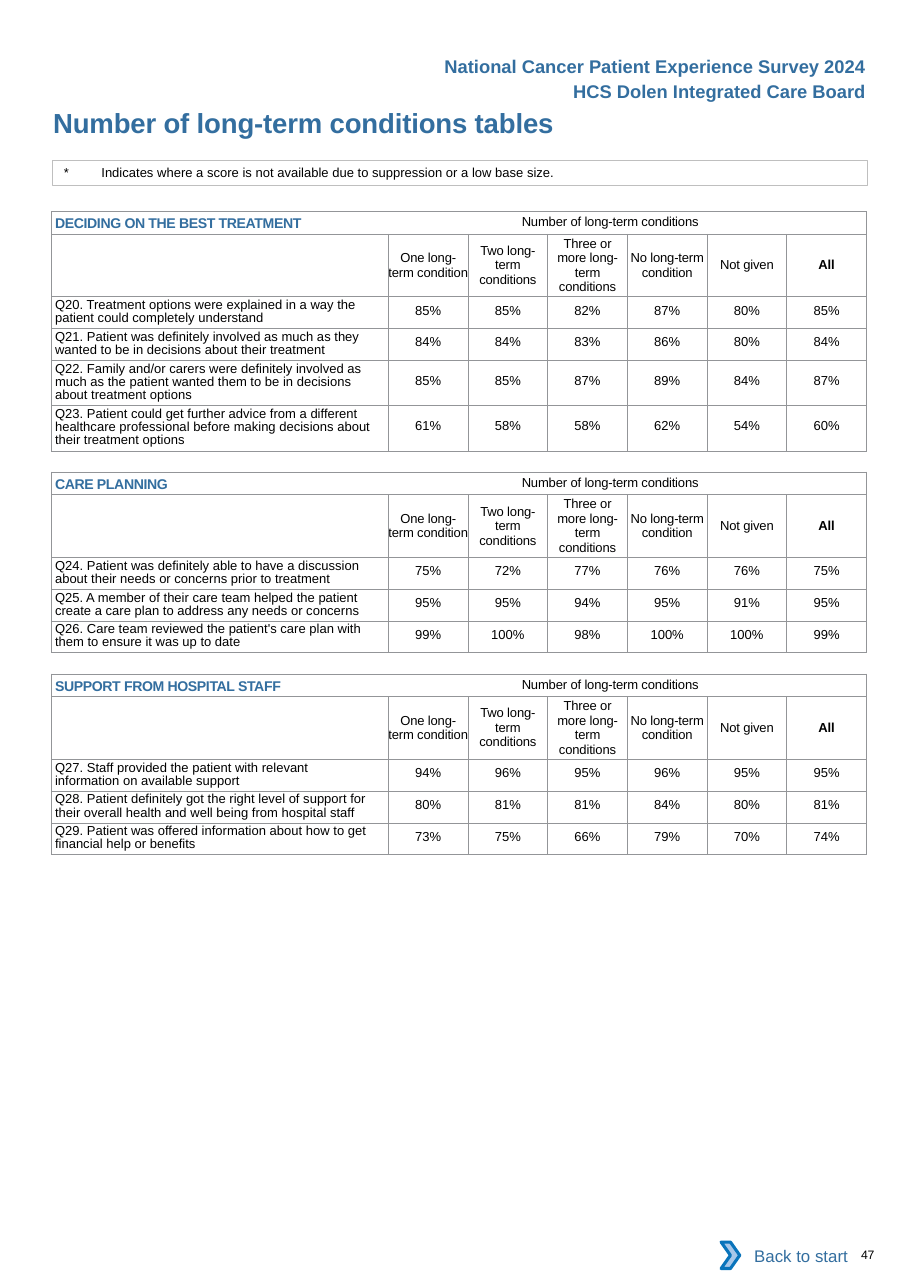
from pptx import Presentation, util as u
from pptx.dml.color import RGBColor
from pptx.enum import shapes, text
from pptx.oxml.ns import qn
from lxml import etree

BLUE, BLACK, GREY = "336E9F", "000000", "939598"
LEFT, WIDTH = 34, 533
LABEL_WIDTH, SCORE_WIDTH = 220, 52.1
TITLE_ROW, NAME_ROW = 14.8, 41
ROW_HEIGHTS = {2: 20.8, 3: 29.6}
SCORE_TOPS = {2: 4.2, 3: 8.6}
COLUMN_NAMES = ["One long-term condition", "Two long-term conditions",
                "Three or more long-term conditions", "No long-term condition",
                "Not given", "All"]

# Each question: wording, number of lines it takes, scores by column
SECTIONS = [
    (138.2, "DECIDING ON THE BEST TREATMENT", [
        ("Q20. Treatment options were explained in a way the patient could completely understand",
         2, [85, 85, 82, 87, 80, 85]),
        ("Q21. Patient was definitely involved as much as they wanted to be in decisions "
         "about their treatment", 2, [84, 84, 83, 86, 80, 84]),
        ("Q22. Family and/or carers were definitely involved as much as the patient wanted "
         "them to be in decisions about treatment options", 3, [85, 85, 87, 89, 84, 87]),
        ("Q23. Patient could get further advice from a different healthcare professional "
         "before making decisions about their treatment options",
         3, [61, 58, 58, 62, 54, 60])]),
    (308.5, "CARE PLANNING", [
        ("Q24. Patient was definitely able to have a discussion about their needs or "
         "concerns prior to treatment", 2, [75, 72, 77, 76, 76, 75]),
        ("Q25. A member of their care team helped the patient create a care plan to "
         "address any needs or concerns", 2, [95, 95, 94, 95, 91, 95]),
        ("Q26. Care team reviewed the patient's care plan with them to ensure it was "
         "up to date", 2, [99, 100, 98, 100, 100, 99])]),
    (440.4, "SUPPORT FROM HOSPITAL STAFF", [
        ("Q27. Staff provided the patient with relevant information on available support",
         2, [94, 96, 95, 96, 95, 95]),
        ("Q28. Patient definitely got the right level of support for their overall health "
         "and well being from hospital staff", 2, [80, 81, 81, 84, 80, 81]),
        ("Q29. Patient was offered information about how to get financial help or benefits",
         2, [73, 75, 66, 79, 70, 74])]),
]


def colour(value):
    return RGBColor.from_string(value)


def write_text(paragraph, words, size=8.5, color=BLACK, bold=False, align="LEFT",
               spacing=0, baseline=0, line=None):
    """Append a formatted run; spacing is in points, baseline in percent."""
    run = paragraph.add_run()
    run.text = words
    run.font.name, run.font.size, run.font.bold = "Arial", u.Pt(size), bold
    run.font.color.rgb = colour(color)
    properties = run.font._element
    if spacing:
        properties.set("spc", str(round(spacing * 100)))
    if baseline:
        properties.set("baseline", str(baseline * 1000))
    paragraph.alignment = getattr(text.PP_ALIGN, align)
    if line:
        paragraph.line_spacing = u.Pt(line)


def add_tab_stop(paragraph, position):
    properties = paragraph._p.get_or_add_pPr()
    stops = etree.SubElement(properties, qn("a:tabLst"))
    etree.SubElement(stops, qn("a:tab"), pos=str(u.Pt(position)), algn="l")


def set_insets(holder, left=0, top=0, right=0, bottom=0):
    holder.margin_left, holder.margin_top = u.Pt(left), u.Pt(top)
    holder.margin_right, holder.margin_bottom = u.Pt(right), u.Pt(bottom)


def add_plain_shape(parent, kind, box, fill=None, line=None, line_width=0.5):
    shape = parent.add_shape(kind, *map(u.Pt, box))
    shape.shadow.inherit = False
    if fill:
        shape.fill.solid()
        shape.fill.fore_color.rgb = colour(fill)
    else:
        shape.fill.background()
    if line:
        shape.line.color.rgb = colour(line)
        shape.line.width = u.Pt(line_width)
    else:
        shape.line.fill.background()
    return shape


def add_heading(slide, box):
    left, top, width, height = box
    lines = ["National Cancer Patient Experience Survey 2024", "HCS Dolen Integrated Care Board"]
    for index, words in enumerate(lines):
        label = slide.shapes.add_textbox(
            u.Pt(left), u.Pt(top + index * 16.2), u.Pt(width), u.Pt(21.6))
        label.text_frame.word_wrap = True
        write_text(label.text_frame.paragraphs[0], words, size=12, color=BLUE,
                   bold=True, align="RIGHT")
    title = slide.shapes.title
    title.left, title.top = u.Pt(LEFT), u.Pt(top + 36.5)
    title.width, title.height = u.Pt(width + 40), u.Pt(height - 36.5)
    frame = title.text_frame
    frame.auto_size = text.MSO_AUTO_SIZE.NONE
    frame.vertical_anchor = text.MSO_ANCHOR.TOP
    set_insets(frame, left=0.7)
    write_text(frame.paragraphs[0], "Number of long-term conditions tables",
               size=18, color=BLUE, bold=True, spacing=-0.1)


def add_note(slide, box):
    note = add_plain_shape(slide.shapes, shapes.MSO_SHAPE.RECTANGLE, box, line="BFBFBF")
    frame = note.text_frame
    frame.vertical_anchor = text.MSO_ANCHOR.TOP
    set_insets(frame, left=7.8, top=2.6)
    paragraph = frame.paragraphs[0]
    write_text(paragraph, "*\tIndicates where a score is not available due to "
                          "suppression or a low base size.")
    add_tab_stop(paragraph, 24.5)


def format_cell(cell):
    """Give the cell thin grey borders, no fill and no insets."""
    properties = cell._tc.get_or_add_tcPr()
    for side in ("a:lnL", "a:lnR", "a:lnT", "a:lnB"):
        border = etree.SubElement(properties, qn(side), w=str(u.Pt(0.5)))
        fill = etree.SubElement(border, qn("a:solidFill"))
        etree.SubElement(fill, qn("a:srgbClr"), val=GREY)
    cell.fill.background()
    set_insets(cell)


def add_section_table(slide, box, heading, questions):
    left, top, width = box
    heights = [TITLE_ROW, NAME_ROW] + [ROW_HEIGHTS[lines] for _, lines, _ in questions]
    frame = slide.shapes.add_table(len(heights), len(COLUMN_NAMES) + 1, u.Pt(left),
                                   u.Pt(top), u.Pt(width), u.Pt(sum(heights)))
    table = frame.table
    table.first_row = table.horz_banding = False
    for index, column in enumerate(table.columns):
        column.width = u.Pt(SCORE_WIDTH if index else LABEL_WIDTH)
    for row, height in zip(table.rows, heights):
        row.height = u.Pt(height)
    for cell in table.iter_cells():
        format_cell(cell)

    header = table.cell(0, 0)
    header.merge(table.cell(0, len(COLUMN_NAMES)))
    header.vertical_anchor = text.MSO_ANCHOR.MIDDLE
    header.margin_left = u.Pt(2.2)
    paragraph = header.text_frame.paragraphs[0]
    write_text(paragraph, heading + "\t", size=15.8, color=BLUE, bold=True,
               spacing=-0.2, baseline=-8, line=11.8)
    write_text(paragraph, "Number of long-term conditions", spacing=-0.1)
    add_tab_stop(paragraph, 305)

    for index, name in enumerate(COLUMN_NAMES, 1):
        cell = table.cell(1, index)
        cell.vertical_anchor = text.MSO_ANCHOR.MIDDLE
        write_text(cell.text_frame.paragraphs[0], name, bold=name == "All",
                   align="CENTER", spacing=-0.1)

    for row, (question, lines, scores) in enumerate(questions, 2):
        label = table.cell(row, 0)
        set_insets(label, left=2.2, top=1.6, right=10)
        write_text(label.text_frame.paragraphs[0], question, line=8.6)
        for index, score in enumerate(scores, 1):
            cell = table.cell(row, index)
            cell.margin_top = u.Pt(SCORE_TOPS[lines])
            write_text(cell.text_frame.paragraphs[0], f"{score}%", align="CENTER")


def add_footer(slide, box):
    left, top, width, height = box
    group = slide.shapes.add_group_shape().shapes
    button = add_plain_shape(group, shapes.MSO_SHAPE.RECTANGLE,
                             (left + 5, top, 85, height), fill="FFFFFF")
    button.text_frame.vertical_anchor = text.MSO_ANCHOR.MIDDLE
    write_text(button.text_frame.paragraphs[0], "Back to start", size=11,
               color=BLUE, align="RIGHT")
    add_plain_shape(group, shapes.MSO_SHAPE.CHEVRON, (left, top + 6.5, 12.2, 17.3),
                    fill="A8C7E9", line="0A74BB", line_width=2)
    number = slide.shapes.add_textbox(u.Pt(left + 84.5), u.Pt(top + 10),
                                      u.Pt(width - 84.5), u.Pt(9.4))
    number.text_frame.word_wrap = True
    set_insets(number.text_frame, left=7.2)
    write_text(number.text_frame.paragraphs[0], "47", size=8, spacing=-0.2)


def main():
    presentation = Presentation()
    presentation.slide_width, presentation.slide_height = u.Pt(594.72), u.Pt(841.68)
    slide = presentation.slides.add_slide(presentation.slide_layouts[5])
    add_heading(slide, (273, 32.5, 300, 58))
    add_note(slide, (LEFT, 105, WIDTH, 16))
    for top, heading, questions in SECTIONS:
        add_section_table(slide, (LEFT - 0.2, top, WIDTH), heading, questions)
    add_footer(slide, (471.3, 805.2, 121, 30.2))
    presentation.save("out.pptx")


if __name__ == "__main__":
    main()
